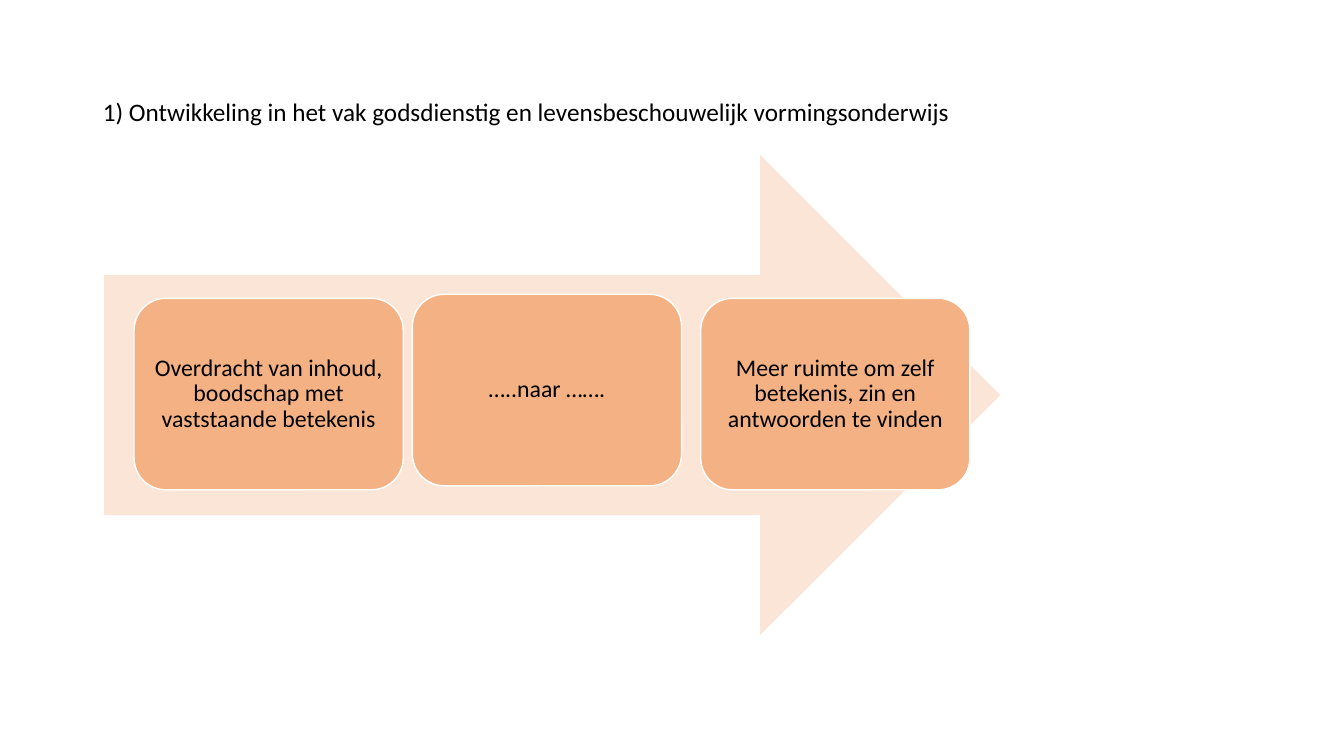
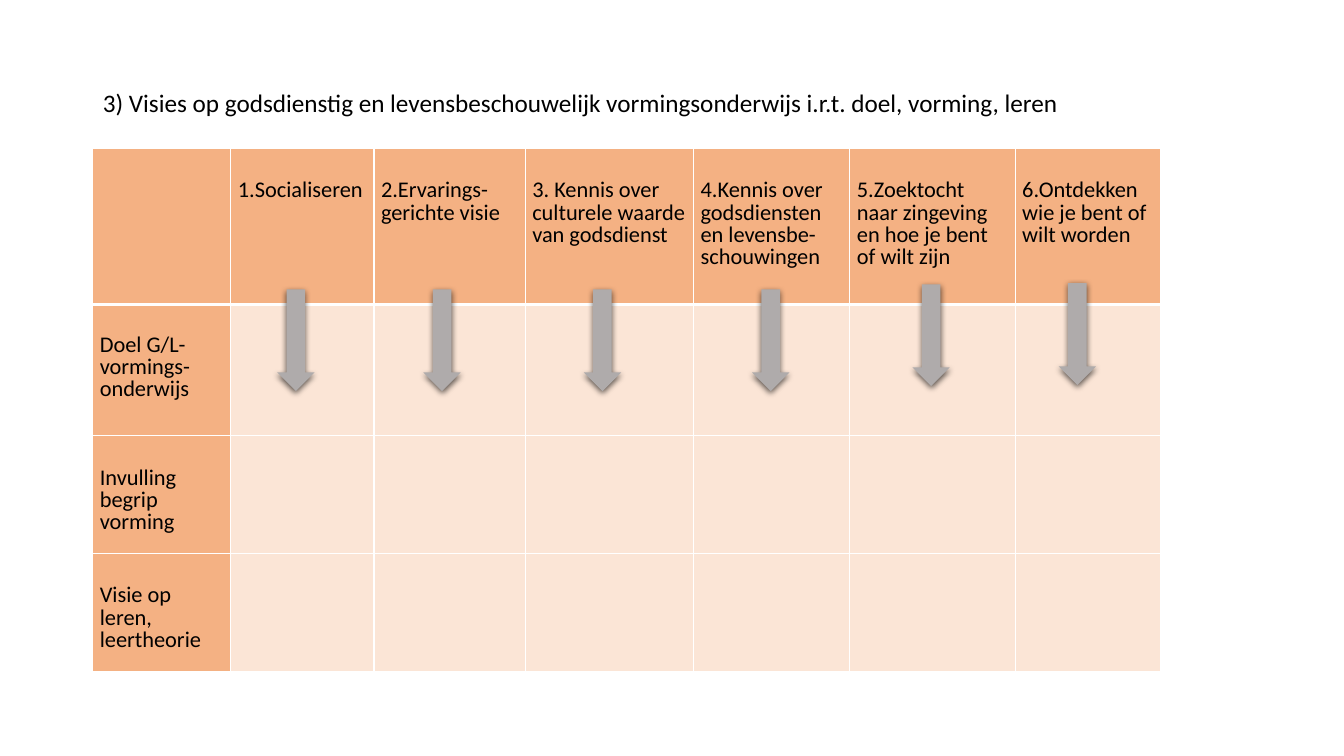
from lxml.etree import SubElement
from pptx import Presentation
from pptx.dml.color import RGBColor
from pptx.enum.shapes import MSO_SHAPE as Shape
from pptx.enum.text import MSO_ANCHOR as Anchor, MSO_AUTO_SIZE as AutoSize, PP_ALIGN as Align
from pptx.oxml import parse_xml
from pptx.oxml.ns import nsdecls, qn
from pptx.util import Inches, Pt

COLORS = {"text": "000000", "strong": "F4B183", "pale": "FBE5D6",
          "line": "FFFFFF", "arrow": "AFABAB"}
FONT = "Calibri"
TITLE_LEFT, TITLE_WIDTH = 0.92, 11.5

# Slide 1: title, big arrow and its steps (left, top, text)
DEVELOPMENT_TITLE = "1) Ontwikkeling in het vak godsdienstig en levensbeschouwelijk vormingsonderwijs"
BIG_ARROW = (1.03, 1.54, 8.89, 4.76)
STEP_SIZE = (2.67, 1.9)
STEPS = [
    (1.33, 2.96, "Overdracht van inhoud, boodschap met vaststaande betekenis"),
    (4.09, 2.92, "…..naar ……."),
    (6.95, 2.96, "Meer ruimte om zelf betekenis, zin en antwoorden te vinden"),
]

# Slide 2: title, table and small arrows
VISIONS_TITLE = ("3) Visies op godsdienstig en levensbeschouwelijk vormingsonderwijs "
                 "i.r.t. doel, vorming, leren")
TABLE_LEFT, TABLE_TOP = 0.92, 1.47
COLUMNS = [  # width, heading
    (1.37, ""),
    (1.42, "1.Socialiseren"),
    (1.5, "2.Ervarings-gerichte visie"),
    (1.67, "3. Kennis over culturele waarde van godsdienst"),
    (1.55, "4.Kennis over godsdiensten en levensbe-schouwingen"),
    (1.64, "5.Zoektocht naar zingeving en hoe je bent of wilt zijn"),
    (1.44, "6.Ontdekken wie je bent of wilt worden"),
]
ROWS = [  # height, space above the text, label
    (1.55, 0.33, ""),
    (1.3, 0.31, "Doel G/L-vormings-onderwijs"),
    (1.17, 0.33, "Invulling begrip vorming"),
    (1.17, 0.33, "Visie op leren, leertheorie"),
]
SMALL_ARROW_SIZE = (0.37, 1.01)
SMALL_ARROWS = [(2.75, 2.87), (4.2, 2.87), (5.79, 2.87),
                (7.46, 2.87), (9.05, 2.82), (10.5, 2.81)]


def color(name):
    return RGBColor.from_string(COLORS[name])


def paint(fill, name):
    fill.solid()
    fill.fore_color.rgb = color(name)


def write(frame, text, size, spacing, align=Align.LEFT):
    frame.word_wrap = True
    paragraph = frame.paragraphs[0]
    paragraph.text = text
    paragraph.alignment = align
    paragraph.line_spacing = spacing
    font = paragraph.font
    font.name, font.size = FONT, Pt(size)
    font.color.rgb = color("text")


def add_titled_slide(presentation, text, top, height):
    slide = presentation.slides.add_slide(presentation.slide_layouts[5])
    title = slide.shapes.title
    title.left, title.top = Inches(TITLE_LEFT), Inches(top)
    title.width, title.height = Inches(TITLE_WIDTH), Inches(height)
    title.text_frame.auto_size = AutoSize.NONE
    title.text_frame.vertical_anchor = Anchor.MIDDLE
    write(title.text_frame, text, 18, 0.9)
    return slide


def add_filled_shape(slide, kind, box, fill):
    shape = slide.shapes.add_shape(kind, *map(Inches, box))
    shape.shadow.inherit = False
    paint(shape.fill, fill)
    shape.line.fill.background()
    return shape


def add_step(slide, left, top, text):
    step = add_filled_shape(slide, Shape.ROUNDED_RECTANGLE, (left, top, *STEP_SIZE), "strong")
    step.line.color.rgb = color("line")
    step.line.width = Pt(1)
    frame = step.text_frame
    frame.margin_left = frame.margin_right = Inches(0.07)
    frame.margin_top = frame.margin_bottom = Inches(0.07)
    frame.vertical_anchor = Anchor.MIDDLE
    write(frame, text, 17, 0.9, Align.CENTER)


def add_soft_shadow(shape):
    effects = shape._element.spPr.find(qn("a:effectLst"))
    effects.append(parse_xml(
        f'<a:outerShdw {nsdecls("a")} blurRad="{Pt(4.5)}" dist="{Pt(1.5)}" dir="5400000" '
        'algn="ctr" rotWithShape="0"><a:srgbClr val="000000"><a:alpha val="63000"/>'
        '</a:srgbClr></a:outerShdw>'))


def set_borders(cell, widths):
    properties = cell._tc.get_or_add_tcPr()
    for side, width in zip("LRTB", widths):
        border = SubElement(properties, qn(f"a:ln{side}"), w=str(Pt(width)))
        fill = SubElement(border, qn("a:solidFill"))
        SubElement(fill, qn("a:srgbClr"), val=COLORS["line"])


def add_vision_table(slide):
    widths = [width for width, _ in COLUMNS]
    heights = [height for height, *_ in ROWS]
    box = (TABLE_LEFT, TABLE_TOP, sum(widths), sum(heights))
    table = slide.shapes.add_table(len(ROWS), len(COLUMNS), *map(Inches, box)).table
    table.first_row = table.horz_banding = False
    for column, width in zip(table.columns, widths):
        column.width = Inches(width)
    for r, (height, inset, label) in enumerate(ROWS):
        table.rows[r].height = Inches(height)
        for c, (_, heading) in enumerate(COLUMNS):
            cell = table.cell(r, c)
            # A thick rule parts the heading row from the body
            set_borders(cell, (1, 1, 3 if r == 1 else 1, 3 if r == 0 else 1))
            paint(cell.fill, "strong" if r == 0 or c == 0 else "pale")
            text = heading if r == 0 else label if c == 0 else ""
            if text:
                cell.margin_left = cell.margin_right = Inches(0.07)
                cell.margin_top, cell.margin_bottom = Inches(inset), 0
                write(cell.text_frame, text, 16, Pt(16))


def main():
    presentation = Presentation()
    presentation.slide_width, presentation.slide_height = Inches(13.33), Inches(7.5)

    # Development of the subject
    slide = add_titled_slide(presentation, DEVELOPMENT_TITLE, 0.4, 1.45)
    add_filled_shape(slide, Shape.RIGHT_ARROW, BIG_ARROW, "pale")
    for step in STEPS:
        add_step(slide, *step)

    # Visions on aim, formation and learning
    slide = add_titled_slide(presentation, VISIONS_TITLE, 0.5, 1.07)
    add_vision_table(slide)
    for position in SMALL_ARROWS:
        arrow = add_filled_shape(slide, Shape.DOWN_ARROW, (*position, *SMALL_ARROW_SIZE), "arrow")
        add_soft_shadow(arrow)

    presentation.save("out.pptx")


if __name__ == "__main__":
    main()
